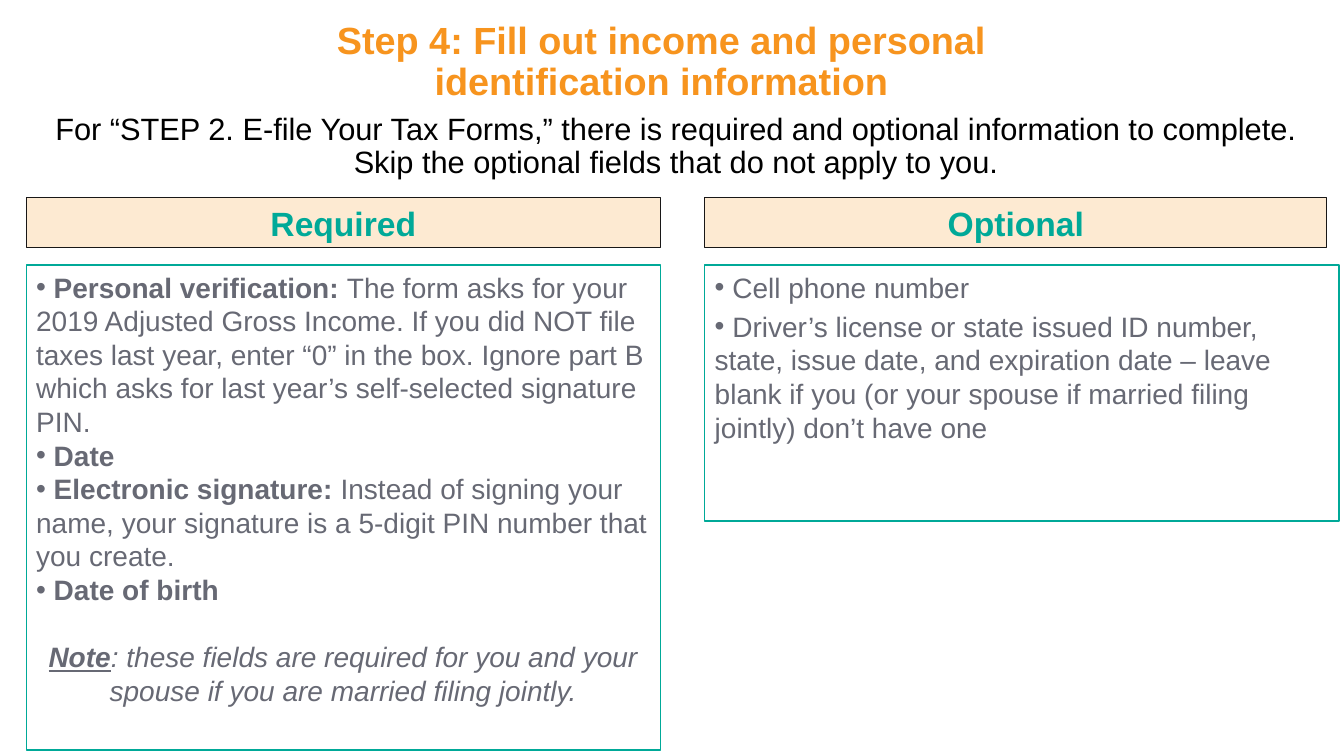
from dataclasses import dataclass

from lxml import etree
from pptx import Presentation
from pptx import util as u
from pptx.dml.color import RGBColor
from pptx.enum import shapes, text
from pptx.oxml import ns

COLORS = {
    "title": "F7941E",
    "intro": "000000",
    "teal": "00A998",
    "body": "676974",
    "header_fill": "FDEAD2",
    "header_line": "181717",
    "white": "FFFFFF",
}
FONT = "Arial"
HEADER_TOP, HEADER_HEIGHT = 1.96, 0.5
BOX_TOP, BOX_WIDTH = 2.63, 6.29


@dataclass
class Run:
    text: str
    bold: bool = False
    underline: bool = False


@dataclass
class Item:
    runs: list[Run]
    note: bool = False


@dataclass
class Column:
    heading: str
    left: float
    header_width: float
    box_height: float
    space_after: float
    items: list[Item]


COLUMNS = [
    Column("Required", 0.26, 6.29, 4.81, 0, [
        Item([Run(" Personal verification:\u00a0", bold=True),
              Run("The form asks for your 2019 Adjusted Gross Income. If you did NOT file "
                  "taxes last year, enter “0” in the box. Ignore part B which asks for "
                  "last year’s self-selected signature PIN.")]),
        Item([Run(" Date", bold=True)]),
        Item([Run(" Electronic signature:", bold=True),
              Run("\u00a0Instead of signing your name, your signature is a 5-digit PIN "
                  "number that you create.")]),
        Item([Run(" Date of birth", bold=True)]),
        Item([Run("Note", bold=True, underline=True),
              Run(": these fields are required for you and your spouse if you are "
                  "married filing jointly.")], note=True),
    ]),
    Column("Optional", 6.99, 6.17, 2.54, 4, [
        Item([Run(" Cell phone number")]),
        Item([Run(" Driver’s license or state issued ID number, state, issue date, and "
                  "expiration date – leave blank if you (or your spouse if married filing "
                  "jointly) don’t have one")]),
    ]),
]


def rgb(name: str) -> RGBColor:
    return RGBColor.from_string(COLORS[name])


def set_font(paragraph, size: float, color: str, bold: bool | None = None) -> None:
    font = paragraph.font
    font.name, font.size, font.bold = FONT, u.Pt(size), bold
    font.color.rgb = rgb(color)


def set_bullet(paragraph, character: str | None) -> None:
    properties = paragraph._p.get_or_add_pPr()
    properties.set("marL", "0")
    properties.set("indent", "0")
    if character:
        etree.SubElement(properties, ns.qn("a:buFont"), typeface=FONT)
        etree.SubElement(properties, ns.qn("a:buChar"), char=character)
    else:
        etree.SubElement(properties, ns.qn("a:buNone"))


def fill_placeholder(shape, box: tuple[float, float, float, float], words: str,
                     size: float, color: str, bold: bool) -> None:
    shape.left, shape.top, shape.width, shape.height = map(u.Inches, box)
    frame = shape.text_frame
    frame.text = words
    frame.word_wrap = True
    frame.auto_size = text.MSO_AUTO_SIZE.NONE
    frame.vertical_anchor = text.MSO_ANCHOR.TOP
    paragraph = frame.paragraphs[0]
    set_bullet(paragraph, None)
    paragraph.alignment = text.PP_ALIGN.CENTER
    paragraph.line_spacing = 0.9
    paragraph.space_before = u.Pt(0)
    set_font(paragraph, size, color, bold)


def add_box(slide, left: float, top: float, width: float, height: float,
            fill: str, line: str, weight: float, anchor):
    shape = slide.shapes.add_shape(shapes.MSO_SHAPE.RECTANGLE, u.Inches(left), u.Inches(top),
                                   u.Inches(width), u.Inches(height))
    shape.shadow.inherit = False
    shape.fill.solid()
    shape.fill.fore_color.rgb = rgb(fill)
    shape.line.color.rgb = rgb(line)
    shape.line.width = u.Pt(weight)
    shape.text_frame.word_wrap = True
    shape.text_frame.vertical_anchor = anchor
    return shape.text_frame


def add_column(slide, column: Column) -> None:
    # Heading bar
    frame = add_box(slide, column.left, HEADER_TOP, column.header_width, HEADER_HEIGHT,
                    "header_fill", "header_line", 0.75, text.MSO_ANCHOR.MIDDLE)
    frame.text = column.heading
    frame.paragraphs[0].alignment = text.PP_ALIGN.CENTER
    set_font(frame.paragraphs[0], 24, "teal", True)

    # List box
    frame = add_box(slide, column.left, BOX_TOP, BOX_WIDTH, column.box_height,
                    "white", "teal", 1, text.MSO_ANCHOR.TOP)
    for index, item in enumerate(column.items):
        paragraph = frame.add_paragraph() if index else frame.paragraphs[0]
        set_bullet(paragraph, None if item.note else "•")
        paragraph.alignment = text.PP_ALIGN.CENTER if item.note else text.PP_ALIGN.LEFT
        paragraph.space_after = u.Pt(column.space_after)
        if item.note:
            paragraph.space_before = u.Pt(24)
        set_font(paragraph, 20, "body")
        paragraph.font.italic = item.note
        for part in item.runs:
            run = paragraph.add_run()
            run.text = part.text
            if part.bold:
                run.font.bold = True
            if part.underline:
                run.font.underline = True


def main() -> None:
    presentation = Presentation()
    presentation.slide_width = u.Inches(13.33)
    presentation.slide_height = u.Inches(7.5)
    slide = presentation.slides.add_slide(presentation.slide_layouts[1])

    # Title and introduction
    fill_placeholder(slide.shapes.title, (2.05, 0.17, 9.02, 0.77),
                     "Step 4: Fill out income and personal identification information",
                     27, "title", True)
    fill_placeholder(slide.placeholders[1], (0.26, 1.08, 12.89, 1),
                     "For “STEP 2. E-file Your Tax Forms,” there is required and optional "
                     "information to complete. Skip the optional fields that do not apply to you.",
                     22, "intro", False)

    # Required and optional columns
    for column in COLUMNS:
        add_column(slide, column)
    presentation.save("out.pptx")


if __name__ == "__main__":
    main()
